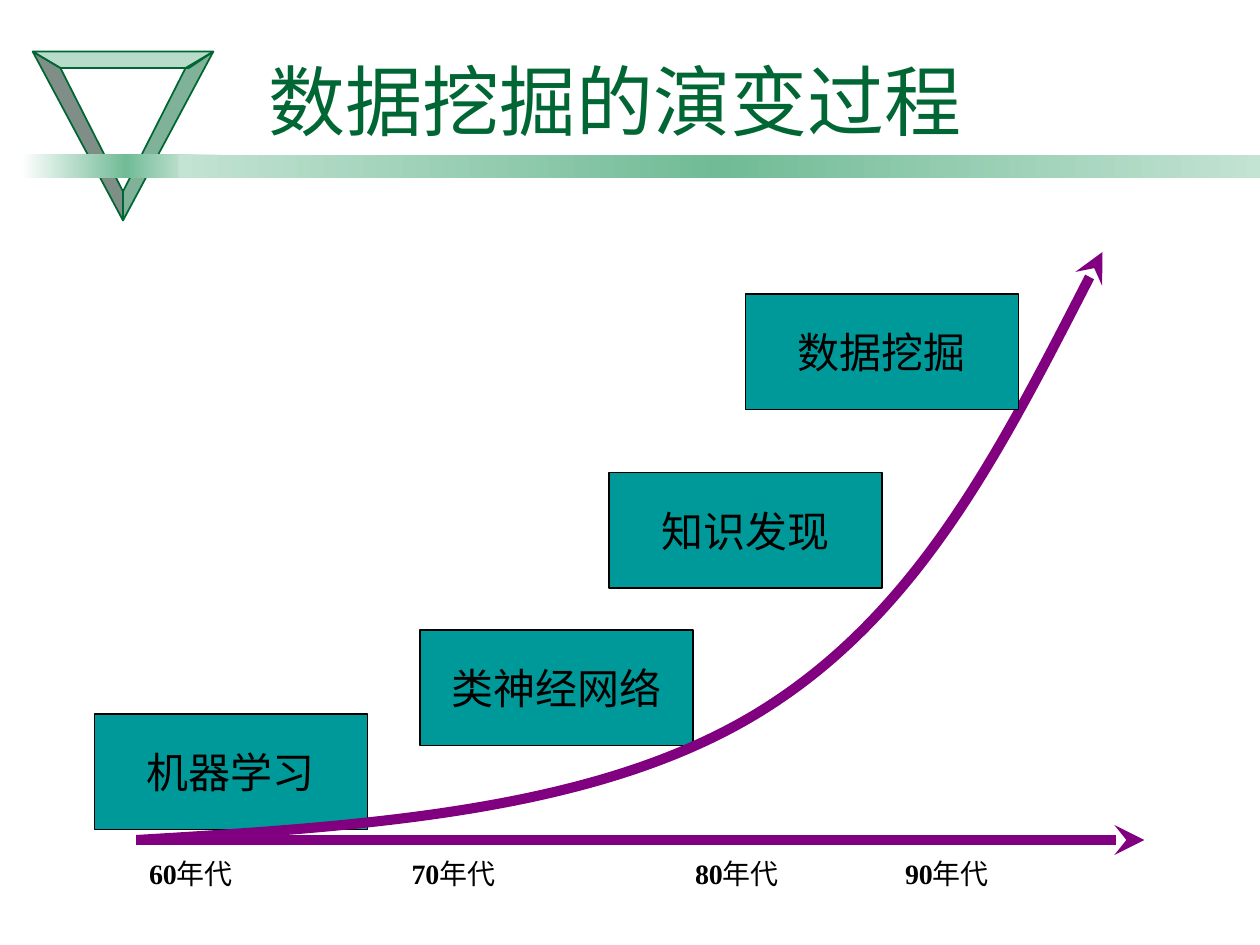
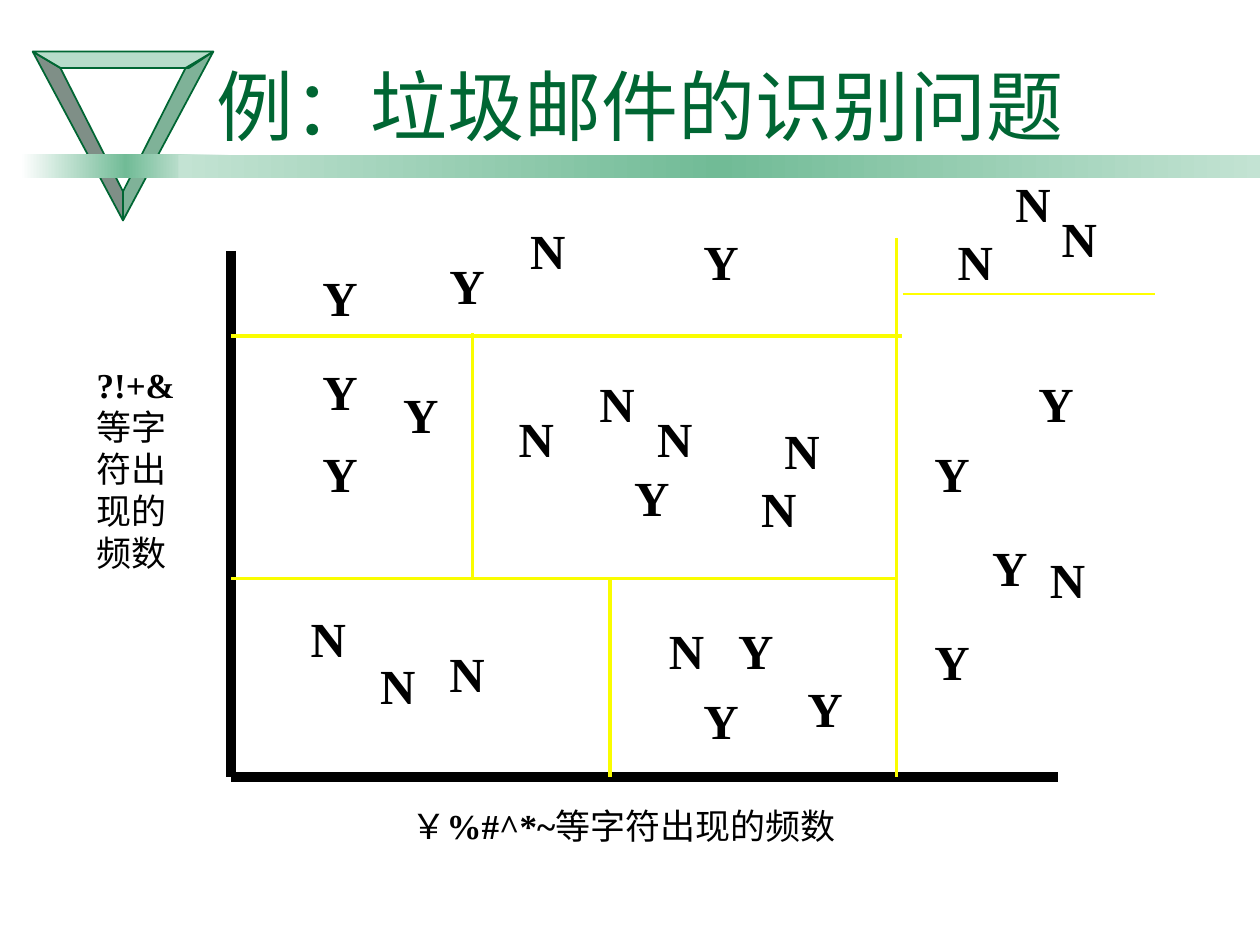
from copy import deepcopy
from typing import NamedTuple

from lxml.etree import SubElement
from pptx import Presentation
from pptx.dml.color import RGBColor
from pptx.enum.shapes import MSO_CONNECTOR, MSO_SHAPE
from pptx.enum.text import MSO_ANCHOR, MSO_AUTO_SIZE, PP_ALIGN
from pptx.oxml.ns import qn
from pptx.util import Emu, Inches, Pt

# Slide grid: 120 columns by 90 rows of square cells
SLIDE_W, SLIDE_H = Inches(10), Inches(7.5)
CELL = SLIDE_W / 120

LATIN, CJK = "Times New Roman", "Noto Sans CJK SC"
BLACK = RGBColor(0x00, 0x00, 0x00)
WHITE = RGBColor(0xFF, 0xFF, 0xFF)
GREEN = RGBColor(0x00, 0x66, 0x33)
DARK_GREEN = RGBColor(0x00, 0x20, 0x10)
MINT = RGBColor(0x71, 0xBB, 0x96)
PALE_MINT = RGBColor(0xC3, 0xE3, 0xD3)
TEAL = RGBColor(0x00, 0x99, 0x99)
PURPLE = RGBColor(0x80, 0x00, 0x80)
YELLOW = RGBColor(0xFA, 0xFD, 0x00)
BRIGHT_YELLOW = RGBColor(0xFF, 0xFF, 0x00)


class Box(NamedTuple):
    """Left, top, width and height in grid cells."""
    x: float
    y: float
    w: float
    h: float


class Stage(NamedTuple):
    name: str
    x: float
    y: float


class Decade(NamedTuple):
    year: str
    x: float


class Rule(NamedTuple):
    x1: float
    y1: float
    x2: float
    y2: float
    color: RGBColor = YELLOW
    width: float = 2


STAGES = [Stage("机器学习", 9, 68), Stage("类神经网络", 40, 60),
          Stage("知识发现", 58, 45), Stage("数据挖掘", 71, 28)]
DECADES = [Decade("60", 13.6), Decade("70", 38.6),
           Decade("80", 65.6), Decade("90", 85.6)]
GROWTH_CURVE = [(13, 80), (34.8, 78.7), (56.6, 77.3), (72, 68),
                (87.4, 58.7), (96.1, 41.3), (105, 24)]

AXES = [Rule(22, 23.9, 22, 74, BLACK, 6), Rule(22, 74, 100.8, 74, BLACK, 6)]
SPLITS = [Rule(45, 55.1, 45, 31.7), Rule(58.1, 74, 58.1, 55.1),
          Rule(85.4, 74, 85.4, 22.7), Rule(22, 32, 85.9, 32),
          Rule(22, 55.1, 85.4, 55.1),
          Rule(86, 28, 110, 28, BRIGHT_YELLOW, 0.75)]

# Mail samples as (column, row) on their own finer lattice
SAMPLE_X, SAMPLE_Y = 29, 15.9
SAMPLE_DX, SAMPLE_DY = 1.1, 1.12
SAMPLES = {
    "Y": [(1, 8), (8, 18), (1, 23), (1, 16), (54, 23), (59, 31), (28, 25),
          (12, 7), (34, 5), (54, 39), (37, 38), (43, 43), (34, 44), (63, 17)],
    "N": [(18, 20), (30, 20), (41, 21), (0, 37), (12, 40), (31, 38), (56, 5),
          (65, 3), (19, 4), (39, 26), (6, 41), (61, 0), (25, 17), (64, 32)],
}


def cells(n: float) -> Emu:
    return Emu(round(n * CELL))


# Text
def put_text(tf, *runs: str, size: float, color: RGBColor = BLACK,
             align=PP_ALIGN.LEFT, anchor=MSO_ANCHOR.TOP, wrap: bool = True,
             auto_size=MSO_AUTO_SIZE.NONE) -> None:
    """Write one paragraph; ASCII runs are bold Latin, the others CJK."""
    tf.auto_size, tf.word_wrap, tf.vertical_anchor = auto_size, wrap, anchor
    tf.margin_left = tf.margin_right = Inches(0.05)
    tf.margin_top = tf.margin_bottom = Inches(0.05)
    p = tf.paragraphs[0]
    p.alignment = align
    for text in runs:
        r = p.add_run()
        r.text = text
        r.font.size = Pt(size)
        r.font.color.rgb = color
        r.font.bold = text.isascii()
        r.font.name = LATIN if text.isascii() else CJK
        SubElement(r.font._element, qn("a:ea")).set("typeface", CJK)


def add_text(slide, box: Box, *runs: str, **fmt) -> None:
    sp = slide.shapes.add_textbox(*map(cells, box))
    put_text(sp.text_frame, *runs, auto_size=MSO_AUTO_SIZE.SHAPE_TO_FIT_TEXT, **fmt)


# Shapes and lines
def add_rect(slide, box: Box):
    sp = slide.shapes.add_shape(MSO_SHAPE.RECTANGLE, *map(cells, box))
    sp.shadow.inherit = False
    return sp


def add_band(slide, box: Box, edge: RGBColor):
    """Horizontal bar fading from mint in the middle to the edge colour."""
    sp = add_rect(slide, box)
    sp.line.fill.background()
    sp.fill.gradient()
    sp.fill.gradient_angle = 0
    stops = sp.element.find(".//" + qn("a:gsLst"))
    stops.insert(1, deepcopy(stops[0]))
    for stop, position, color in zip(sp.fill.gradient_stops, (0, 0.5, 1),
                                     (edge, MINT, edge)):
        stop.position = position
        stop.color.rgb = color
    return sp


def add_outline(slide, points, color: RGBColor, width: float, close: bool):
    first, *rest = [(cells(x), cells(y)) for x, y in points]
    builder = slide.shapes.build_freeform(*first)
    builder.add_line_segments(rest, close=close)
    sp = builder.convert_to_shape()
    sp.shadow.inherit = False
    sp.line.color.rgb = color
    sp.line.width = Pt(width)
    return sp


def add_curve(slide, points, color: RGBColor, width: float):
    """Open Bezier curve: a start, then two handles and an end per piece."""
    sp = add_outline(slide, points, color, width, close=False)
    sp.fill.background()
    outline = sp.element.find(".//" + qn("a:path"))
    segments = outline.findall(qn("a:lnTo"))
    for i in range(0, len(segments), 3):
        bezier = SubElement(outline, qn("a:cubicBezTo"))
        for segment in segments[i:i + 3]:
            bezier.append(segment[0])
            outline.remove(segment)
    return sp


def add_rule(slide, rule: Rule):
    ends = map(cells, rule[:4])
    sp = slide.shapes.add_connector(MSO_CONNECTOR.STRAIGHT, *ends)
    sp.line.color.rgb = rule.color
    sp.line.width = Pt(rule.width)
    SubElement(sp.element.spPr, qn("a:effectLst"))
    return sp


def add_arrowhead(sp) -> None:
    ln = sp.element.find(".//" + qn("a:ln"))
    SubElement(ln, qn("a:tailEnd")).set("type", "stealth")


# Shared look
def add_emblem(slide, layout) -> None:
    """Draw the triangular frame and its bar, then hand them to the layout."""
    mid = 11.72
    left = [(mid, 21), (mid, 18.24), (5.76, 6.48), (3.12, 4.92)]
    right = [(2 * mid - x, y) for x, y in left]
    top = [left[3], left[2], (18, 6.48), right[3]]
    parts = []
    for points, color in ((left, DARK_GREEN), (top, MINT), (right, GREEN)):
        sp = add_outline(slide, points, GREEN, 1, close=True)
        sp.fill.solid()
        sp.fill.fore_color.rgb = color
        rgb = sp.element.spPr.find(qn("a:solidFill"))[0]
        SubElement(rgb, qn("a:alpha")).set("val", "50000")
        parts.append(sp)
    parts.append(add_band(slide, Box(2, 14.65, 20, 2.3), WHITE))
    for sp in parts:
        layout.shapes.element.append(sp.element)


def new_slide(prs, layout, title: str, box: Box):
    slide = prs.slides.add_slide(layout)
    sp = slide.shapes.title
    sp.left, sp.top, sp.width, sp.height = map(cells, box)
    put_text(sp.text_frame, title, size=44, color=GREEN, anchor=MSO_ANCHOR.MIDDLE)
    add_band(slide, Box(17, 14.75, 103, 2.25), PALE_MINT)
    return slide


# Slides
def fill_evolution(slide) -> None:
    def add_stage(stage: Stage) -> None:
        sp = add_rect(slide, Box(stage.x, stage.y, 26, 11))
        sp.fill.solid()
        sp.fill.fore_color.rgb = TEAL
        sp.line.color.rgb = BLACK
        sp.line.width = Pt(0.75)
        put_text(sp.text_frame, stage.name, size=24, align=PP_ALIGN.CENTER,
                 anchor=MSO_ANCHOR.MIDDLE, wrap=False)

    # The curve passes over the first two stages and under the last two
    for stage in STAGES[:2]:
        add_stage(stage)
    add_arrowhead(add_curve(slide, GROWTH_CURVE, PURPLE, 5.75))
    for stage in STAGES[2:]:
        add_stage(stage)

    # Time axis
    add_arrowhead(add_rule(slide, Rule(13, 80, 109, 80, PURPLE, 5.75)))
    for decade in DECADES:
        add_text(slide, Box(decade.x, 81, 15.8, 4.9), decade.year, "年代", size=16)


def fill_spam_example(slide) -> None:
    for rule in AXES + SPLITS:
        add_rule(slide, rule)
    for label, places in SAMPLES.items():
        for col, row in places:
            box = Box(SAMPLE_X + col * SAMPLE_DX, SAMPLE_Y + row * SAMPLE_DY, 4.8, 6.4)
            add_text(slide, box, label, size=28, wrap=False)

    # Axis labels
    add_text(slide, Box(38.6, 76, 47.8, 5.9), "￥", "%#^*~", "等字符出现的频数", size=20)
    add_text(slide, Box(8.6, 34, 8.8, 23.8), "?!+&", "等字符出现的频数", size=20)


def main() -> None:
    prs = Presentation()
    prs.slide_width, prs.slide_height = SLIDE_W, SLIDE_H
    layout = prs.slide_layouts.get_by_name("Title Only")

    evolution = new_slide(prs, layout, "数据挖掘的演变过程", Box(25, 0, 93, 19))
    add_emblem(evolution, layout)
    fill_evolution(evolution)

    spam = new_slide(prs, layout, "例：垃圾邮件的识别问题", Box(20, 4, 96, 12))
    fill_spam_example(spam)

    prs.save("out.pptx")


if __name__ == "__main__":
    main()
